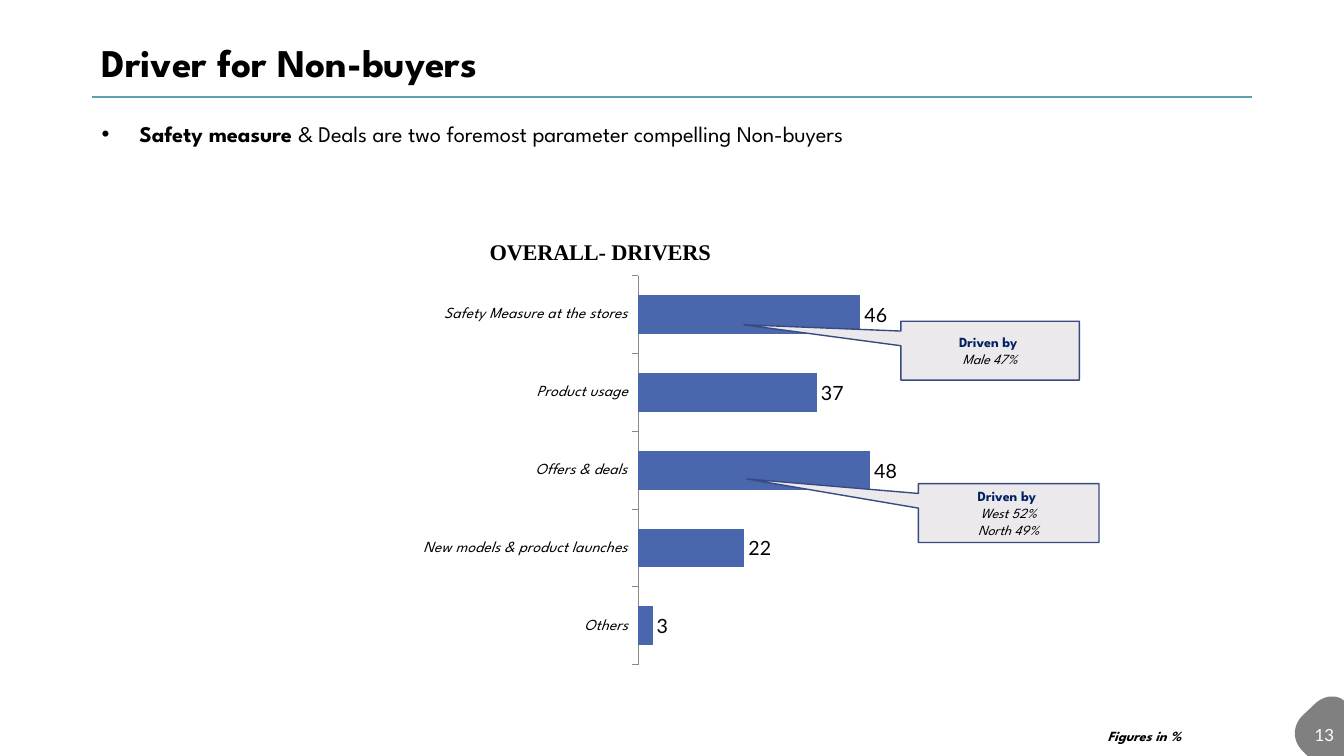
from lxml.etree import SubElement
from pptx import Presentation
from pptx.chart.data import CategoryChartData
from pptx.dml.color import RGBColor
from pptx.enum.chart import (XL_CHART_TYPE, XL_LABEL_POSITION, XL_TICK_LABEL_POSITION,
                             XL_TICK_MARK)
from pptx.enum.shapes import MSO_CONNECTOR, MSO_SHAPE
from pptx.enum.text import MSO_ANCHOR, PP_ALIGN
from pptx.oxml import parse_xml
from pptx.oxml.ns import nsdecls, qn
from pptx.util import Pt

HUES = {"ink": "000000", "white": "FFFFFF", "rule": "5AA2AE", "tab": "808080",
        "bar": "4A66AC", "note": "EBE9EC", "edge": "374B7F", "navy": "002060",
        "axis": "898989"}
FACE = "League Spartan"


def hue(name):
    return RGBColor.from_string(HUES[name])


def style(font, size, face=FACE, color="ink", bold=False, italic=False):
    font.name, font.size = face, Pt(size)
    font.bold, font.italic = bold, italic
    font.color.rgb = hue(color)


def write(para, text, **form):
    run = para.add_run()
    run.text = text
    style(run.font, **form)


def add_box(slide, box, anchor=MSO_ANCHOR.TOP):
    frame = slide.shapes.add_textbox(*map(Pt, box)).text_frame
    frame.word_wrap = True
    frame.vertical_anchor = anchor
    return frame.paragraphs[0]


def curve(a, b, c, d, steps=12):
    """Points along a cubic curve, without its start."""
    for i in range(1, steps + 1):
        t = i / steps
        u = 1 - t
        yield tuple(u**3 * p + 3 * u * u * t * q + 3 * u * t * t * r + t**3 * s
                    for p, q, r, s in zip(a, b, c, d))


def add_head(slide, box):
    left, top, width, height = box
    title = slide.shapes.title
    title.left, title.top, title.width, title.height = map(Pt, box)
    frame = title.text_frame
    frame.vertical_anchor = MSO_ANCHOR.MIDDLE
    para = frame.paragraphs[0]
    para.alignment = PP_ALIGN.LEFT
    para.line_spacing = 0.9
    write(para, "Driver for Non-buyers", size=28, bold=True)
    # Rule under the title
    y = top + 49.5
    rule = slide.shapes.add_connector(MSO_CONNECTOR.STRAIGHT, Pt(left + 0.5), Pt(y),
                                      Pt(left + 828.5), Pt(y))
    rule.line.color.rgb = hue("rule")
    rule.line.width = Pt(1.5)
    SubElement(rule._element.spPr, qn("a:effectLst"))


def add_point(slide, box):
    para = add_box(slide, box, MSO_ANCHOR.MIDDLE)
    props = para._p.get_or_add_pPr()
    props.set("marL", str(Pt(27)))
    props.set("indent", str(-Pt(27)))
    SubElement(props, qn("a:buFont")).set("typeface", "Arial")
    SubElement(props, qn("a:buChar")).set("char", "•")
    para.line_spacing = 1.07
    write(para, "Safety measure ", size=16, bold=True)
    write(para, "& Deals are two foremost parameter compelling Non-buyers", size=16)


def place(parent, spot, inner=False):
    """Build a manual chart layout from x, y and, for a plot, w, h."""
    for old in parent.findall(qn("c:layout")):
        parent.remove(old)
    layout = parse_xml(f"<c:layout {nsdecls('c')}><c:manualLayout/></c:layout>")
    parts = [("layoutTarget", "inner")] if inner else []
    parts += [("xMode", "edge"), ("yMode", "edge"), *zip("xywh", spot)]
    for tag, val in parts:
        SubElement(layout[0], qn("c:" + tag)).set("val", str(val))
    return layout


def add_bars(slide, box):
    data = CategoryChartData()
    data.categories = ["Safety Measure at the stores", "Product usage", "Offers & deals",
                       "New models & product launches", "Others"]
    data.add_series("Series 1", [46, 37, 48, 22, 3])
    chart = slide.shapes.add_chart(XL_CHART_TYPE.BAR_CLUSTERED, *map(Pt, box), data).chart
    style(chart.font, 18, "Lato")
    chart.has_legend = False
    # Chart title
    chart.has_title = True
    para = chart.chart_title.text_frame.paragraphs[0]
    write(para, "OVERALL- DRIVERS", size=16, face="Times New Roman", bold=True)
    head = chart.chart_title._element
    spot = place(head, (0.35, 0.04))
    head.find(qn("c:tx")).addnext(spot)
    # Axes
    cats, vals = chart.category_axis, chart.value_axis
    cats.reverse_order = True
    cats.major_tick_mark = XL_TICK_MARK.OUTSIDE
    cats.tick_label_position = XL_TICK_LABEL_POSITION.NEXT_TO_AXIS
    cats.format.line.color.rgb = hue("axis")
    cats.format.line.width = Pt(0.75)
    style(cats.tick_labels.font, 11, italic=True)
    vals.minimum_scale, vals.maximum_scale = 0, 60
    vals.has_major_gridlines = False
    vals.visible = False
    # Bars and their values
    plot = chart.plots[0]
    plot.gap_width = 100
    plot.vary_by_categories = False
    fill = plot.series[0].format.fill
    fill.solid()
    fill.fore_color.rgb = hue("bar")
    plot.has_data_labels = True
    labels = plot.data_labels
    labels.show_value = True
    labels.position = XL_LABEL_POSITION.OUTSIDE_END
    style(labels.font, 14, "Lato")
    area = chart._chartSpace.chart.plotArea
    area.insert(0, place(area, (0.554, 0.13, 0.388, 0.841), inner=True))


def add_note(slide, box, tip, lines):
    note = slide.shapes.add_shape(MSO_SHAPE.RECTANGULAR_CALLOUT, *map(Pt, box))
    note.adjustments[0], note.adjustments[1] = tip
    note.shadow.inherit = False
    note.fill.solid()
    note.fill.fore_color.rgb = hue("note")
    note.line.color.rgb = hue("edge")
    note.line.width = Pt(1)
    frame = note.text_frame
    frame.vertical_anchor = MSO_ANCHOR.MIDDLE
    para = frame.paragraphs[0]
    para.alignment = PP_ALIGN.CENTER
    write(para, "Driven by ", size=10, color="navy", bold=True)
    for line in lines:
        para = frame.add_paragraph()
        para.alignment = PP_ALIGN.CENTER
        write(para, line, size=10, italic=True)


def add_tab(slide, box):
    left, top, width, height = box
    right, base = left + width, top + height
    # Rounded corner tab, cut off by the slide edge
    start = (left + 26.5, top)
    dots = [*curve(start, (left + 29, top), (left + 31, top + 0.5), (left + 33, top + 1.5)),
            (right, top + 3), (right, base), (left + 9, base), (left + 5.5, base - 3.5),
            *curve((left + 5.5, base - 3.5), (left - 2, base - 11),
                   (left - 2, base - 21.5), (left + 5.5, base - 29)),
            (left + 14, top + 5.5),
            *curve((left + 14, top + 5.5), (left + 17.5, top + 2), (left + 22, top), start)]
    pen = slide.shapes.build_freeform(*map(Pt, start), scale=1)
    pen.add_line_segments([(Pt(x), Pt(y)) for x, y in dots])
    tab = pen.convert_to_shape()
    tab.shadow.inherit = False
    tab.fill.solid()
    tab.fill.fore_color.rgb = hue("tab")
    tab.line.fill.background()
    # Slide number
    para = add_box(slide, (right - 216, top + 13, 216, 29), MSO_ANCHOR.MIDDLE)
    para.alignment = PP_ALIGN.RIGHT
    write(para, "13", size=12, face="Lato", color="white")


def main():
    deck = Presentation()
    deck.slide_width, deck.slide_height = Pt(960), Pt(540)
    slide = deck.slides.add_slide(deck.slide_layouts[5])
    add_tab(slide, (925, 497.5, 35, 42.5))
    add_head(slide, (65.5, 19.5, 906.5, 53))
    add_bars(slide, (160, 154, 534, 330.5))
    add_point(slide, (65.5, 81.5, 842.5, 27))
    add_note(slide, (643.5, 229.5, 127.5, 42), (-1.38, -0.44), ["Male 47%"])
    add_note(slide, (656, 345.5, 129, 42), (-1.45, -0.58), ["West 52%", "North 49%"])
    write(add_box(slide, (784, 516, 73.5, 19.5)), "Figures in %",
          size=10, bold=True, italic=True)
    deck.save("out.pptx")


if __name__ == "__main__":
    main()
